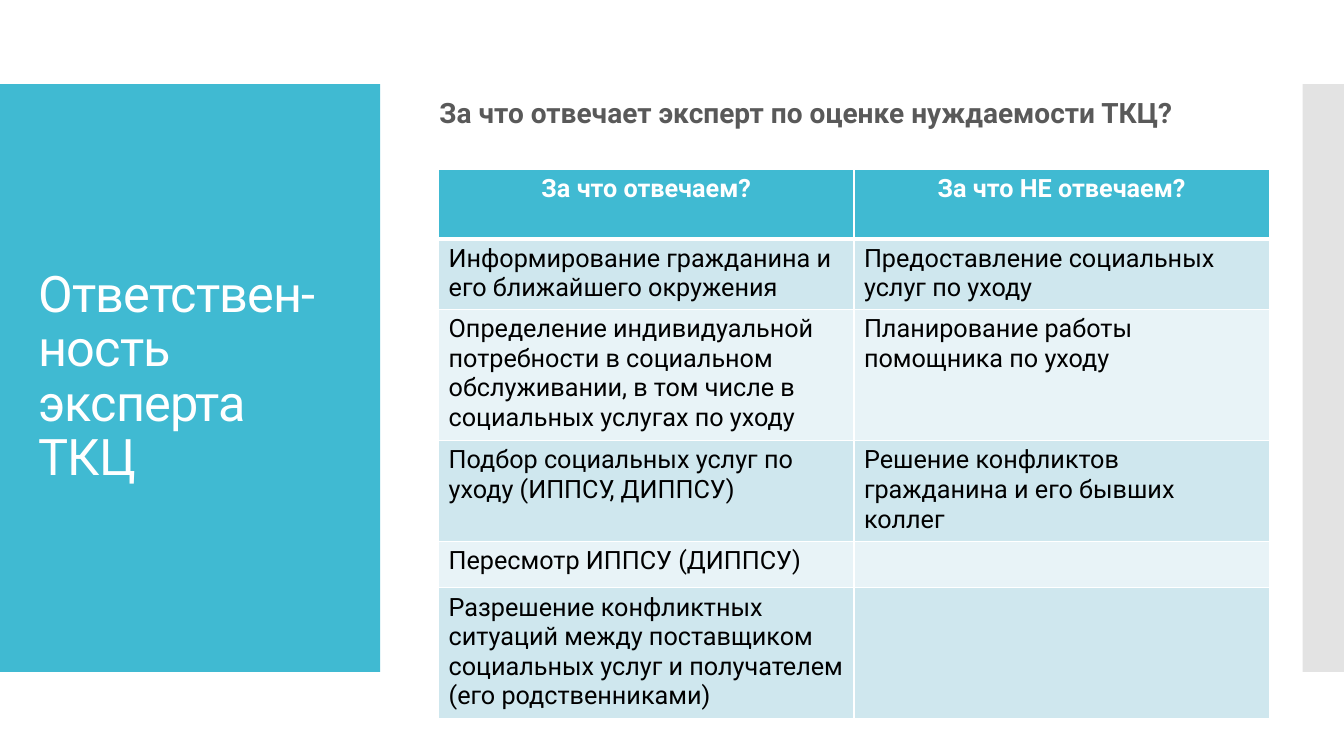
from lxml.etree import SubElement
from pptx import Presentation
from pptx.dml.color import RGBColor
from pptx.enum.shapes import MSO_SHAPE
from pptx.enum.text import MSO_ANCHOR, MSO_AUTO_SIZE, PP_ALIGN
from pptx.oxml.ns import qn
from pptx.util import Inches, Pt

WIDTH, HEIGHT = Inches(13.33), Inches(7.5)
BAND_TOP, BAND_HEIGHT = HEIGHT / 9, HEIGHT * 7 / 9
FONT = "Roboto"

TEAL = RGBColor(0x40, 0xBA, 0xD2)
GREY = RGBColor(0xC8, 0xC8, 0xC8)
DARK_GREY = RGBColor(0x59, 0x59, 0x59)
WHITE = RGBColor(0xFF, 0xFF, 0xFF)
BLACK = RGBColor(0, 0, 0)
ROW_TINTS = (RGBColor(0xCF, 0xE7, 0xEE), RGBColor(0xE8, 0xF3, 0xF7))

HEADERS = ("За что отвечаем?", "За что НЕ отвечаем?")
DUTIES = (
    ("Информирование гражданина и его ближайшего окружения",
     "Предоставление социальных услуг по уходу"),
    ("Определение индивидуальной потребности в социальном обслуживании, "
     "в том числе в социальных услугах по уходу",
     "Планирование работы помощника по уходу"),
    ("Подбор социальных услуг по уходу (ИППСУ, ДИППСУ)",
     "Решение конфликтов гражданина и его бывших коллег"),
    ("Пересмотр ИППСУ (ДИППСУ)", ""),
    ("Разрешение конфликтных ситуаций между поставщиком социальных услуг "
     "и получателем (его родственниками)", ""),
)
ROW_HEIGHTS = (0.69, 0.7, 0.7, 0.7, 0.46, 0.7)


def add_run(paragraph, text, size, color, bold=False):
    run = paragraph.add_run()
    run.text = text
    run.font.name = FONT
    run.font.size = Pt(size)
    run.font.bold = bold
    run.font.color.rgb = color
    return run


def add_band(slide, left, width, color, opacity=100):
    band = slide.shapes.add_shape(MSO_SHAPE.RECTANGLE, int(left), int(BAND_TOP),
                                  int(width), int(BAND_HEIGHT))
    band.shadow.inherit = False
    band.fill.solid()
    band.fill.fore_color.rgb = color
    band.line.fill.background()
    if opacity < 100:
        tint = band.element.spPr.find(qn("a:solidFill"))[0]
        SubElement(tint, qn("a:alpha"), val=str(opacity * 1000))
    # Bands lie behind the title
    slide.shapes.title.element.addprevious(band.element)


def format_title(slide, text):
    title = slide.shapes.title
    title.left, title.top = Inches(0.28), Inches(1.23)
    title.width, title.height = Inches(3.3), Inches(5.03)
    frame = title.text_frame
    frame.word_wrap = True
    frame.auto_size = MSO_AUTO_SIZE.NONE
    frame.vertical_anchor = MSO_ANCHOR.MIDDLE
    paragraph = frame.paragraphs[0]
    paragraph.alignment = PP_ALIGN.LEFT
    paragraph.line_spacing = 0.9
    run = add_run(paragraph, text, 36, WHITE)
    run.font._element.set("spc", "-60")


def add_question(slide, text):
    box = slide.shapes.add_textbox(Inches(4.23), Inches(0.94),
                                   Inches(8.61), Inches(0.5))
    box.text_frame.word_wrap = True
    paragraph = box.text_frame.paragraphs[0]
    paragraph.line_spacing = 0.9
    paragraph.space_before = paragraph.space_after = Pt(2.5)
    paragraph._p.get_or_add_pPr().set("marL", str(Inches(0.03)))
    add_run(paragraph, text, 20, DARK_GREY, bold=True)


def set_borders(cell, bottom):
    properties = cell._tc.get_or_add_tcPr()
    sides = {"a:lnL": 1, "a:lnR": 1, "a:lnT": 1, "a:lnB": bottom}
    # Borders come before the fill in the cell properties
    for place, (side, points) in enumerate(sides.items()):
        line = SubElement(properties, qn(side), w=str(Pt(points)))
        fill = SubElement(line, qn("a:solidFill"))
        SubElement(fill, qn("a:srgbClr"), val=str(WHITE))
        properties.insert(place, line)


def fill_cell(cell, text, fill, header):
    cell.fill.solid()
    cell.fill.fore_color.rgb = fill
    set_borders(cell, 3 if header else 1)
    paragraph = cell.text_frame.paragraphs[0]
    paragraph.alignment = PP_ALIGN.CENTER if header else PP_ALIGN.LEFT
    if text:
        add_run(paragraph, text, 18, WHITE if header else BLACK, bold=header)


def add_duties_table(slide):
    rows = (HEADERS, *DUTIES)
    table = slide.shapes.add_table(len(rows), len(HEADERS), Inches(4.35),
                                   Inches(1.68), Inches(8.24),
                                   Inches(sum(ROW_HEIGHTS))).table
    for index, (texts, height) in enumerate(zip(rows, ROW_HEIGHTS)):
        table.rows[index].height = Inches(height)
        header = index == 0
        fill = TEAL if header else ROW_TINTS[(index - 1) % 2]
        for column, text in enumerate(texts):
            fill_cell(table.cell(index, column), text, fill, header)


def main():
    presentation = Presentation()
    presentation.slide_width, presentation.slide_height = WIDTH, HEIGHT
    slide = presentation.slides.add_slide(presentation.slide_layouts[5])

    # Side bands
    add_band(slide, 0, Inches(3.77), TEAL)
    add_band(slide, Inches(12.92), WIDTH - Inches(12.92), GREY, opacity=50)

    # Title and question
    format_title(slide, "Ответствен-ность эксперта ТКЦ")
    add_question(slide, "За что отвечает эксперт по оценке нуждаемости ТКЦ?")

    # Duties
    add_duties_table(slide)
    presentation.save("out.pptx")


if __name__ == "__main__":
    main()
